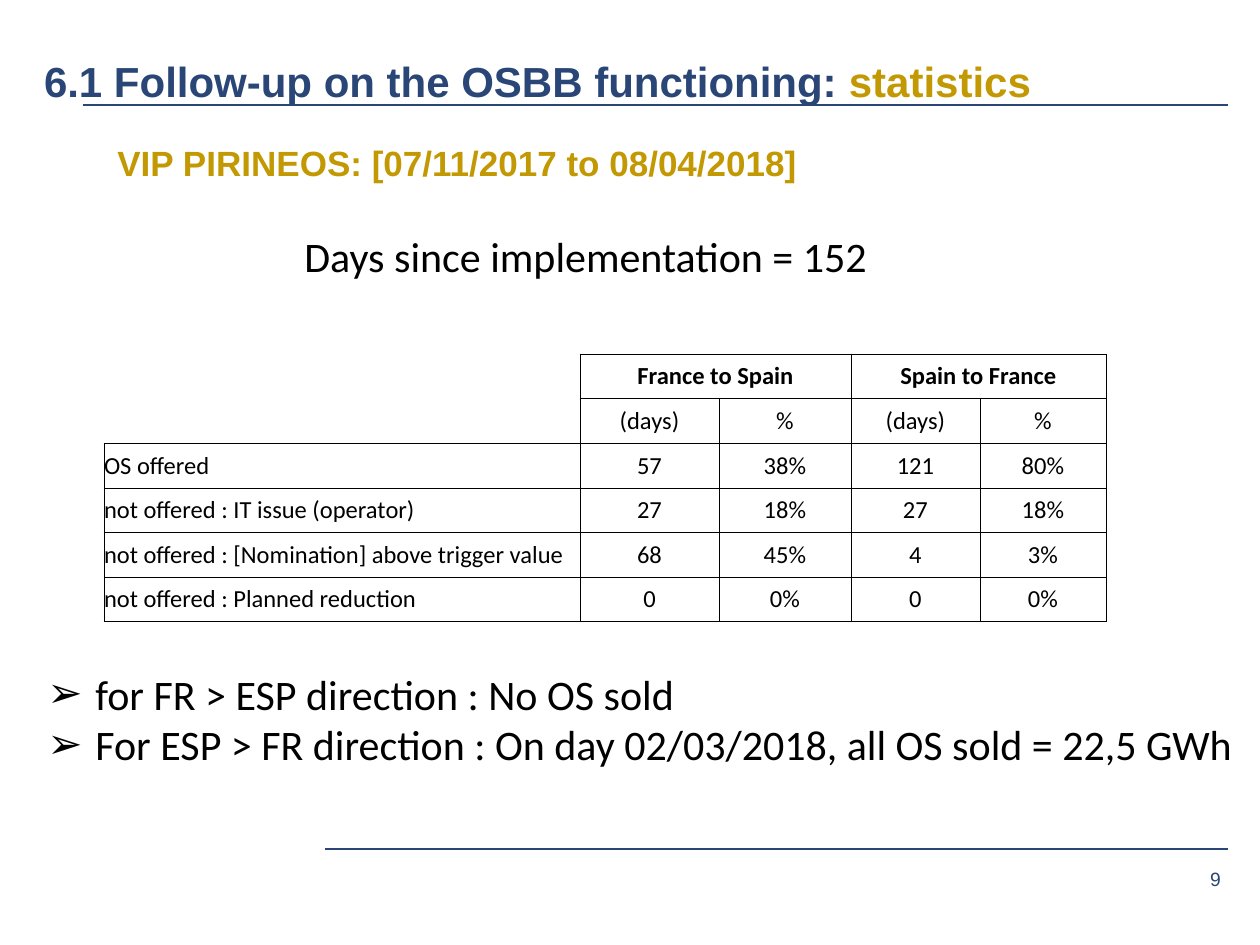
from lxml import etree
from pptx import Presentation
from pptx.dml.color import RGBColor
from pptx.enum.shapes import MSO_CONNECTOR
from pptx.enum.text import MSO_ANCHOR, MSO_AUTO_SIZE, PP_ALIGN
from pptx.oxml.ns import qn
from pptx.util import Pt

LEFT, CENTER, RIGHT = PP_ALIGN.LEFT, PP_ALIGN.CENTER, PP_ALIGN.RIGHT
JUSTIFY = PP_ALIGN.JUSTIFY
TOP, MIDDLE = MSO_ANCHOR.TOP, MSO_ANCHOR.MIDDLE
EMU_PER_PX = 914400 / 126


class Theme:
    navy, gold, black = "2A4677", "C29903", "000000"
    heading_font, body_font = "Arial", "Calibri"
    title, subtitle, body, cell, number = 24, 20, 24, 14, 11
    rule, border = 1.5, 0.5


# Content
TITLE = [("6.1 Follow-up on the OSBB functioning: ", Theme.navy), ("statistics", Theme.gold)]
SUBTITLE = "VIP PIRINEOS: [07/11/2017 to 08/04/2018]"
DAYS = "Days since implementation = 152"
DIRECTIONS = ["France to Spain", "Spain to France"]
ROWS = [
    ("", "(days)", "%", "(days)", "%"),
    ("OS offered", "57", "38%", "121", "80%"),
    ("not offered : IT issue (operator)", "27", "18%", "27", "18%"),
    ("not offered : [Nomination] above trigger value", "68", "45%", "4", "3%"),
    ("not offered : Planned reduction", "0", "0%", "0", "0%"),
]
FINDINGS = [
    "for FR > ESP direction : No OS sold",
    "For ESP > FR direction : On day 02/03/2018, all OS sold = 22,5 GWh",
]
PAGE = "9"

# Places in px
RULES = [(83, 1228, 105), (325, 1228, 849)]
TABLE_LEFT, TABLE_TOP, TABLE_HEIGHT = 104, 354, 268
COLUMN_WIDTHS = [476, 139, 132, 129, 126]
BULLET_INDENT = 48


def px(length):
    return round(length * EMU_PER_PX)


def place(shape, left, top, width, height):
    shape.left, shape.top, shape.width, shape.height = map(px, (left, top, width, height))


def write(frame, lines, size, font=Theme.body_font, color=Theme.black, bold=False,
          align=LEFT, anchor=TOP, wrap=True, margins=True, spacing=None, bullet=None):
    """Fill a frame; each line is a string or a list of (text, color) runs."""
    frame.word_wrap, frame.vertical_anchor = wrap, anchor
    if not margins:
        frame.margin_left = frame.margin_right = frame.margin_top = frame.margin_bottom = 0
    for index, line in enumerate(lines):
        paragraph = frame.add_paragraph() if index else frame.paragraphs[0]
        paragraph.alignment = align
        if spacing:
            paragraph.line_spacing = spacing
        if bullet:
            properties = paragraph._p.get_or_add_pPr()
            properties.set("marL", str(px(BULLET_INDENT)))
            properties.set("indent", str(-px(BULLET_INDENT)))
            etree.SubElement(properties, qn("a:buFont")).set("typeface", Theme.heading_font)
            etree.SubElement(properties, qn("a:buChar")).set("char", bullet)
        for text, run_color in ([(line, color)] if isinstance(line, str) else line):
            run = paragraph.add_run()
            run.text = text
            run.font.size, run.font.name, run.font.bold = Pt(size), font, bold
            run.font.color.rgb = RGBColor.from_string(run_color)


def add_text(slide, box, lines, size, **text_format):
    shape = slide.shapes.add_textbox(*map(px, box))
    write(shape.text_frame, lines, size, **text_format)


def add_rule(slide, start, end, height):
    line = slide.shapes.add_connector(MSO_CONNECTOR.STRAIGHT, *map(px, (start, height, end, height)))
    line.line.color.rgb = RGBColor.from_string(Theme.navy)
    line.line.width = Pt(Theme.rule)
    etree.SubElement(line._element.spPr, qn("a:effectLst"))


def set_borders(cell, sides):
    """Draw the listed sides (L, R, T, B) and clear the others."""
    properties = cell._tc.get_or_add_tcPr()
    for side in "LRTB":
        border = etree.SubElement(properties, qn("a:ln" + side), w=str(Pt(Theme.border)))
        if side in sides:
            fill = etree.SubElement(border, qn("a:solidFill"))
            etree.SubElement(fill, qn("a:srgbClr")).set("val", Theme.black)
        else:
            etree.SubElement(border, qn("a:noFill"))


def add_statistics(slide):
    header = ("", DIRECTIONS[0], "", DIRECTIONS[1], "")
    rows = [header] + ROWS
    table = slide.shapes.add_table(
        len(rows), len(COLUMN_WIDTHS), px(TABLE_LEFT), px(TABLE_TOP),
        px(sum(COLUMN_WIDTHS)), px(TABLE_HEIGHT)).table
    table.first_row = table.horz_banding = False
    for column, width in zip(table.columns, COLUMN_WIDTHS):
        column.width = px(width)
    for row_index, texts in enumerate(rows):
        table.rows[row_index].height = px(TABLE_HEIGHT / len(rows))
        for column_index, text in enumerate(texts):
            cell = table.cell(row_index, column_index)
            corner = column_index == 0 and row_index < 2
            set_borders(cell, ("R", "RB")[row_index] if corner else "LRTB")
            cell.fill.background()
            cell.vertical_anchor = MIDDLE
            cell.margin_left = cell.margin_right = cell.margin_top = cell.margin_bottom = 0
            if text:
                write(cell.text_frame, [text], Theme.cell, bold=row_index == 0,
                      align=CENTER if column_index else LEFT, anchor=None)
    for first in (1, 3):
        table.cell(0, first).merge(table.cell(0, first + 1))


def main():
    presentation = Presentation()
    presentation.slide_width, presentation.slide_height = px(1260), px(945)
    slide = presentation.slides.add_slide(presentation.slide_layouts[5])

    # Rules and page number
    for rule in RULES:
        add_rule(slide, *rule)
    add_text(slide, (1121, 859, 100, 39), [PAGE], Theme.number, font=Theme.heading_font,
             color=Theme.navy, align=RIGHT, anchor=MIDDLE, margins=False)

    # Headings
    title = slide.shapes.title
    place(title, 44, 45, 1177, 50)
    title.text_frame.auto_size = MSO_AUTO_SIZE.NONE
    write(title.text_frame, [TITLE], Theme.title, font=Theme.heading_font, bold=True,
          margins=False, spacing=1.2)
    add_text(slide, (105, 135, 922, 55), [SUBTITLE], Theme.subtitle, font=Theme.heading_font,
             color=Theme.gold, bold=True, align=JUSTIFY)
    add_text(slide, (292, 224, 607, 63), [DAYS], Theme.body, wrap=False)

    # Statistics and findings
    add_statistics(slide)
    add_text(slide, (35, 662, 1211, 115), FINDINGS, Theme.body, bullet="➢")

    presentation.save("out.pptx")


if __name__ == "__main__":
    main()
